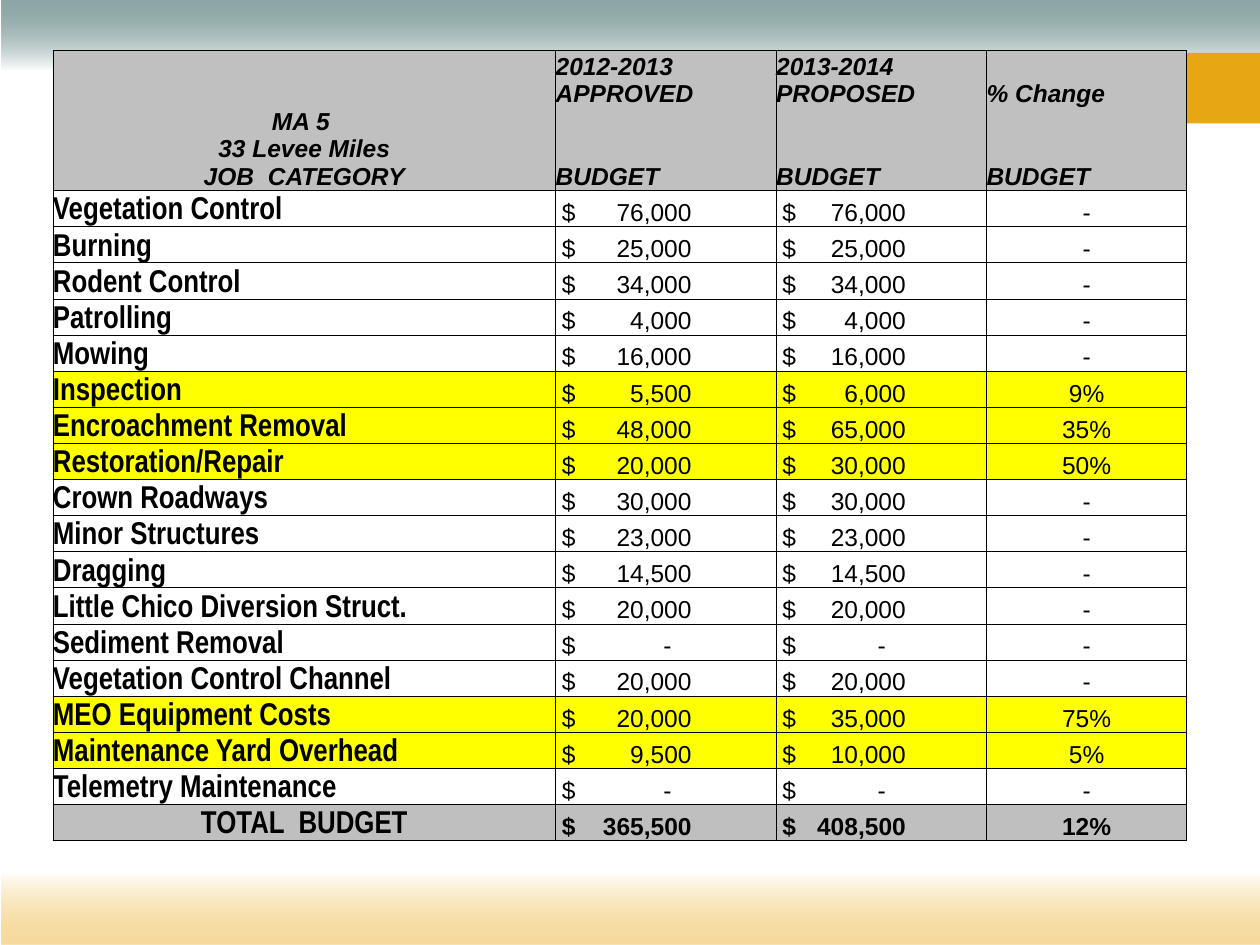
from lxml import etree
from pptx import Presentation
from pptx.dml.color import RGBColor
from pptx.enum.shapes import MSO_SHAPE
from pptx.enum.text import MSO_ANCHOR, PP_ALIGN
from pptx.oxml import parse_xml
from pptx.oxml.ns import nsdecls, qn
from pptx.util import Inches, Pt

GRAY, TOTAL_GRAY, YELLOW = "C0C0C0", "BFBFBF", "FFFF00"
HEADER_ROWS = 3
HEADER = [
    ["MA 5 \n33 Levee Miles\nJOB  CATEGORY", "2012-2013", "2013-2014", ""],
    ["", "APPROVED", "PROPOSED", "% Change"],
    ["", "BUDGET", "BUDGET", "BUDGET"],
]
BUDGET = [
    ["Vegetation Control", "76,000", "76,000", "-"],
    ["Burning", "25,000", "25,000", "-"],
    ["Rodent Control", "34,000", "34,000", "-"],
    ["Patrolling", "4,000", "4,000", "-"],
    ["Mowing", "16,000", "16,000", "-"],
    ["Inspection", "5,500", "6,000", "9%"],
    ["Encroachment Removal", "48,000", "65,000", "35%"],
    ["Restoration/Repair", "20,000", "30,000", "50%"],
    ["Crown Roadways", "30,000", "30,000", "-"],
    ["Minor Structures", "23,000", "23,000", "-"],
    ["Dragging", "14,500", "14,500", "-"],
    ["Little Chico Diversion Struct.", "20,000", "20,000", "-"],
    ["Sediment Removal", "-", "-", "-"],
    ["Vegetation Control Channel", "20,000", "20,000", "-"],
    ["MEO Equipment Costs", "20,000", "35,000", "75%"],
    ["Maintenance Yard Overhead", "9,500", "10,000", "5%"],
    ["Telemetry Maintenance", "-", "-", "-"],
    ["TOTAL  BUDGET", "365,500", "408,500", "12%"],
]
ROWS = HEADER + BUDGET
AMOUNT_TABS = {1: 1.03, 2: 0.98}


def rgb(color):
    return RGBColor.from_string(color)


def set_borders(cell, visible):
    """Draw the named sides (of L, R, T, B) and blank the others."""
    tc_pr = cell._tc.get_or_add_tcPr()
    for i, side in enumerate("LRTB"):
        paint = ('<a:solidFill><a:srgbClr val="000000"/></a:solidFill>'
                 if side in visible else "<a:noFill/>")
        tc_pr.insert(i, parse_xml(
            f'<a:ln{side} {nsdecls("a")} w="{Pt(0.5)}">{paint}</a:ln{side}>'))


prs = Presentation()
prs.slide_width, prs.slide_height = Inches(10), Inches(7.5)
s = prs.slides.add_slide(prs.slide_layouts[6])

# Background bands: left, top, width, height, colour, gradient angle
bands = [
    (0.01, 0, 9.99, 1.09, "215352", 90),
    (1.25, 0.42, 8.75, 0.56, "E7A614", None),
    (0.01, 6.39, 9.99, 1.11, "EEB840", 270),
]
for *box, color, angle in bands:
    sp = s.shapes.add_shape(MSO_SHAPE.RECTANGLE, *map(Inches, box))
    sp.shadow.inherit = False
    sp.line.fill.background()
    if angle is None:
        sp.fill.solid()
        sp.fill.fore_color.rgb = rgb(color)
    else:
        sp._element.spPr.find(qn("a:prstGeom")).addnext(parse_xml(
            f'<a:gradFill {nsdecls("a")} rotWithShape="1"><a:gsLst>'
            f'<a:gs pos="0"><a:srgbClr val="{color}"><a:alpha val="51000"/></a:srgbClr></a:gs>'
            '<a:gs pos="52000"><a:srgbClr val="FFFFFF"/></a:gs></a:gsLst>'
            f'<a:lin ang="{angle * 60000}" scaled="0"/></a:gradFill>'))

# Budget table
table = s.shapes.add_table(len(ROWS), 4, Inches(0.42), Inches(0.4),
                           Inches(9), Inches(6.1)).table
table.first_row = table.horz_banding = False
for col, width in zip(table.columns, [3.99, 1.75, 1.67, 1.59]):
    col.width = Inches(width)
for r, row in enumerate(table.rows):
    row.height = Inches(0.22) if r < HEADER_ROWS else Inches(5.16) // len(BUDGET)
table.cell(0, 0).merge(table.cell(HEADER_ROWS - 1, 0))

for r, values in enumerate(ROWS):
    is_header, is_total = r < HEADER_ROWS, r == len(ROWS) - 1
    if is_header:
        fill = GRAY
    elif is_total:
        fill = TOTAL_GRAY
    else:
        fill = None if values[3] == "-" else YELLOW

    for c, text in enumerate(values):
        cell = table.cell(r, c)
        is_category = c == 0 and not is_header
        is_amount = c in AMOUNT_TABS and not is_header
        cell.vertical_anchor = MSO_ANCHOR.BOTTOM
        cell.margin_left = Inches(0.05 if is_amount else 0)
        cell.margin_right = cell.margin_top = cell.margin_bottom = 0
        if fill:
            cell.fill.solid()
            cell.fill.fore_color.rgb = rgb(fill)
        else:
            cell.fill.background()
        sides = "LRTB"
        if is_header and c > 0:
            sides = ("LRT", "LR", "LRB")[r]
        set_borders(cell, sides)

        cell.text = f"$\t{text}" if is_amount else text
        if is_header:
            centred = c == 0
        else:
            centred = c == 3 or (c == 0 and is_total)
        font = dict(name="Arial Narrow" if is_category else "Arial",
                    size=Pt(18 if is_category else 14),
                    bold=is_header or is_category or is_total,
                    italic=is_header)
        for p in cell.text_frame.paragraphs:
            p.alignment = PP_ALIGN.CENTER if centred else PP_ALIGN.LEFT
            if is_amount:
                # A lone dash stands a little left of the digits' right edge
                stop = AMOUNT_TABS[c] - (0.16 if text == "-" else 0)
                tabs = etree.SubElement(p._p.get_or_add_pPr(), qn("a:tabLst"))
                etree.SubElement(tabs, qn("a:tab"), pos=str(Inches(stop)), algn="r")
            for run in p.runs:
                for key, value in font.items():
                    setattr(run.font, key, value)
                run.font.color.rgb = rgb("000000")
            if not p.runs:
                etree.SubElement(p._p, qn("a:endParaRPr"), sz="1400")

prs.save("out.pptx")
